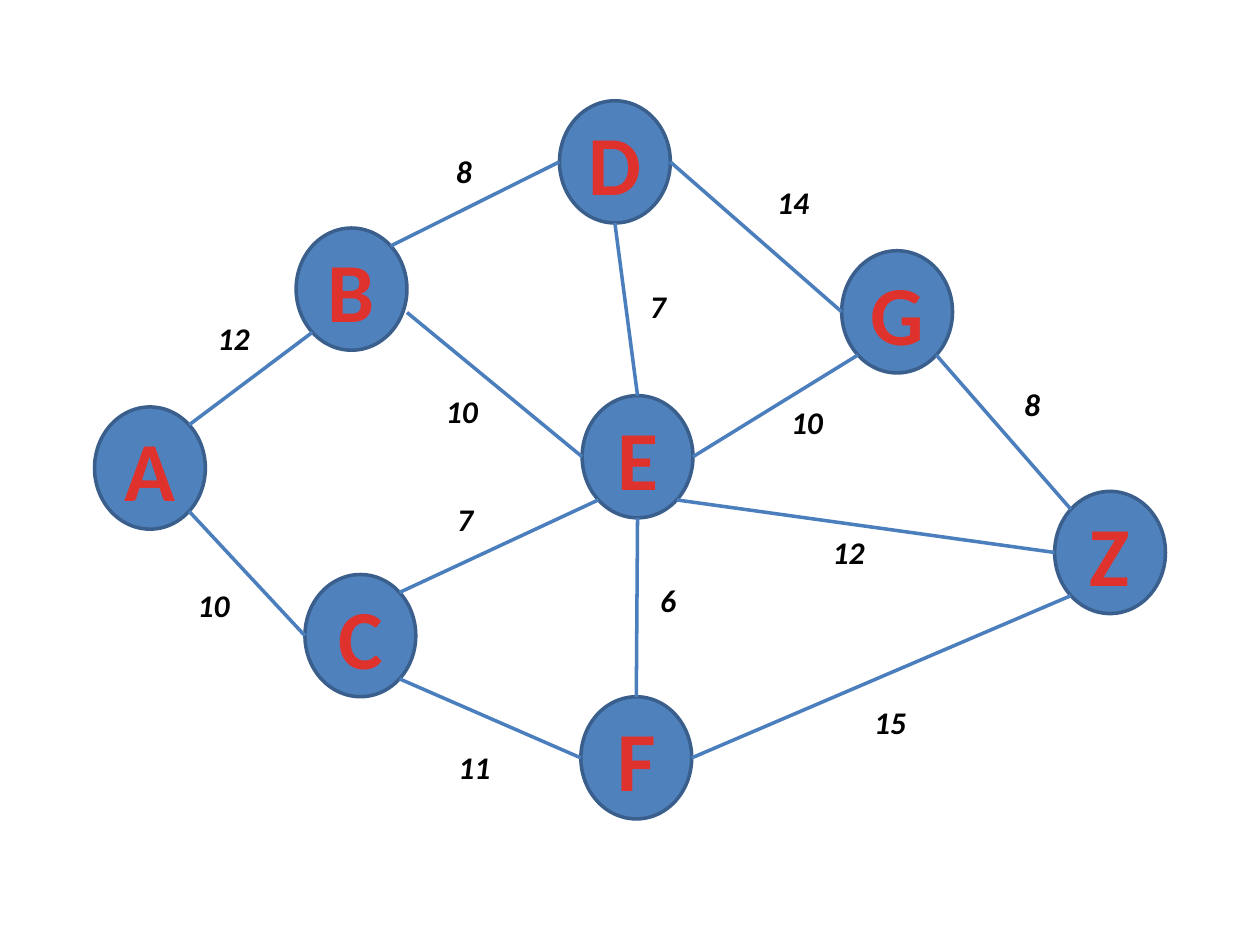
from math import cos, radians, sin

from lxml.etree import SubElement
from pptx import Presentation
from pptx.dml.color import RGBColor
from pptx.enum.shapes import MSO_CONNECTOR, MSO_SHAPE
from pptx.enum.text import MSO_ANCHOR, MSO_AUTO_SIZE, PP_ALIGN
from pptx.oxml.ns import qn
from pptx.util import Inches, Pt

# Content: each node's letter and its left and top, in inches
NODES = {
    "А": (0.75, 3.23), "B": (2.35, 1.81), "С": (2.42, 4.56), "D": (4.44, 0.8),
    "E": (4.62, 3.14), "F": (4.61, 5.53), "G": (6.68, 1.99), "Z": (8.37, 3.9),
}
NODE_WIDTH, NODE_HEIGHT = 0.88, 0.97

# The eight connection sites of an ellipse, in order from the top, anticlockwise
SITES = ["top", "top left", "left", "bottom left",
         "bottom", "bottom right", "right", "top right"]

# Each edge: node, site, node, site, weight, left and top of the weight.
# A site of None is a free end, with a point in place of the node.
EDGES = [
    ("А", "top right", "B", "bottom left", "12", (1.63, 2.48)),
    ("D", "left", "B", "top right", "8", (3.52, 1.16)),
    ("D", "right", "G", "left", "14", (6.07, 1.4)),
    ("Z", "top left", "G", "bottom right", "8", (8.03, 3.01)),
    ("А", "bottom right", "С", "left", "10", (1.47, 4.6)),
    ("E", "left", (3.23, 2.48), None, "10", (3.44, 3.06)),
    ("С", "top right", "E", "bottom left", "7", (3.53, 3.92)),
    ("С", "bottom right", "F", "left", "11", (3.54, 5.89)),
    ("E", "top", "D", "bottom", "7", (5.06, 2.23)),
    ("E", "right", "G", "bottom left", "10", (6.18, 3.15)),
    ("F", "top", "E", "bottom", "6", (5.14, 4.56)),
    ("F", "right", "Z", "bottom left", "15", (6.84, 5.53)),
    ("E", "bottom right", "Z", "left", "12", (6.51, 4.18)),
]


def color(value):
    return RGBColor.from_string(value)


def add_span(box, text, size):
    span = box.text_frame.paragraphs[0].add_run()
    span.text = text
    span.font.name = "Calibri"
    span.font.size = Pt(size)
    span.font.bold = True
    return span


def add_node(page, letter, left, top):
    node = page.shapes.add_shape(MSO_SHAPE.OVAL, Inches(left), Inches(top),
                                 Inches(NODE_WIDTH), Inches(NODE_HEIGHT))
    node.shadow.inherit = False
    node.fill.solid()
    node.fill.fore_color.rgb = color("4F81BD")
    node.line.color.rgb = color("3A5F8C")
    node.line.width = Pt(2)
    node.text_frame.vertical_anchor = MSO_ANCHOR.MIDDLE
    node.text_frame.paragraphs[0].alignment = PP_ALIGN.CENTER

    span = add_span(node, letter, 48)
    fill = span.font.fill
    fill.gradient()
    fill.gradient_angle = 270
    for stop, (position, shade) in zip(fill.gradient_stops,
                                       [(0.25, "E0322D"), (1, "A2201C")]):
        stop.position = position
        stop.color.rgb = color(shade)
    span.font._element.set("spc", "50")
    return node


def end_point(node, site):
    """Place of an edge's end, on the node's outline or free."""
    if site is None:
        return node
    left, top = NODES[node]
    angle = radians(45 * SITES.index(site))
    return (left + NODE_WIDTH / 2 * (1 - sin(angle)),
            top + NODE_HEIGHT / 2 * (1 - cos(angle)))


def add_edge(page, shapes, start, end):
    points = [Inches(value) for value in end_point(*start) + end_point(*end)]
    edge = page.shapes.add_connector(MSO_CONNECTOR.STRAIGHT, *points)
    edge.line.color.rgb = color("4B7EBC")
    edge.line.width = Pt(2)
    SubElement(edge._element.spPr, qn("a:effectLst"))
    # Join to the ellipse's sites, which number eight rather than four
    joints = edge._element.nvCxnSpPr.cNvCxnSpPr
    for tag, (node, site) in (("a:stCxn", start), ("a:endCxn", end)):
        if site:
            SubElement(joints, qn(tag), id=str(shapes[node].shape_id),
                       idx=str(SITES.index(site)))


def add_weight(page, text, left, top):
    width = 0.34 if len(text) == 1 else 0.47
    box = page.shapes.add_textbox(Inches(left), Inches(top),
                                  Inches(width), Inches(0.45))
    box.text_frame.word_wrap = False
    box.text_frame.auto_size = MSO_AUTO_SIZE.SHAPE_TO_FIT_TEXT
    span = add_span(box, text, 18)
    span.font.italic = True
    span.font.color.rgb = color("000000")


def main():
    deck = Presentation()
    deck.slide_width, deck.slide_height = Inches(10), Inches(7.5)
    page = deck.slides.add_slide(deck.slide_layouts[6])

    # Nodes, then edges, then weights on top
    shapes = {letter: add_node(page, letter, *place)
              for letter, place in NODES.items()}
    for first, first_site, second, second_site, _, _ in EDGES:
        add_edge(page, shapes, (first, first_site), (second, second_site))
    for *_, weight, place in EDGES:
        add_weight(page, weight, *place)

    deck.save("out.pptx")


if __name__ == "__main__":
    main()
